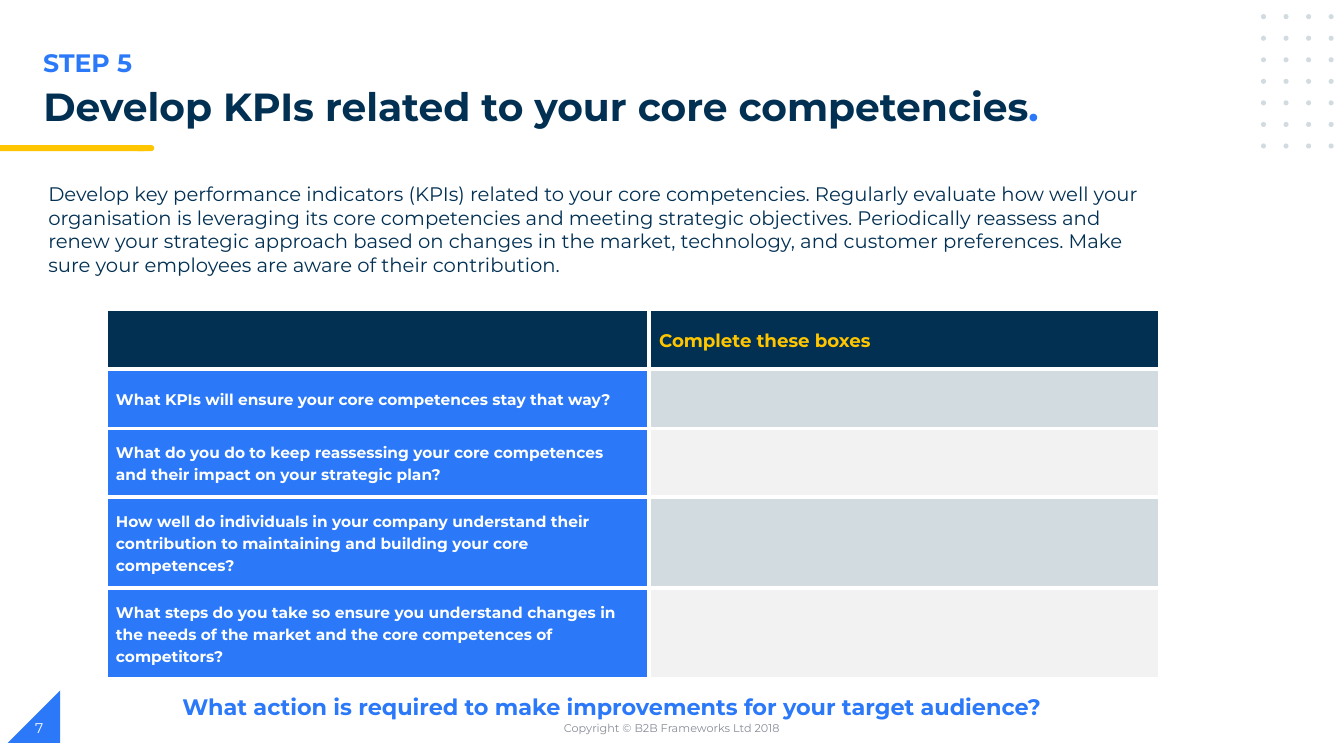
import dataclasses

import pptx
import pptx.dml.color
import pptx.enum.shapes
import pptx.enum.text
import pptx.oxml
import pptx.oxml.ns
import pptx.util

Pt = pptx.util.Pt
Shape = pptx.enum.shapes.MSO_SHAPE
Anchor = pptx.enum.text.MSO_ANCHOR
Align = pptx.enum.text.PP_ALIGN


@dataclasses.dataclass(frozen=True)
class Theme:
    font: str = "Montserrat"
    navy: str = "023053"
    blue: str = "2B79F8"
    yellow: str = "FFC600"
    mist: str = "D1DBE0"
    pale: str = "F2F2F2"
    gray: str = "888C97"
    white: str = "FFFFFF"
    title: float = 28
    step: float = 18
    action: float = 16
    body: float = 14
    header: float = 13
    question: float = 11
    number: float = 10
    copyright: float = 8


THEME = Theme()

QUESTIONS = [
    "What KPIs will ensure your core competences stay that way?",
    "What do you do to keep reassessing your core competences and their impact on your strategic plan?",
    "How well do individuals in your company understand their contribution to maintaining "
    "and building your core competences?",
    "What steps do you take so ensure you understand changes in the needs of the market "
    "and the core competences of competitors?",
]
INTRODUCTION = (
    "Develop key performance indicators (KPIs) related to your core competencies. "
    "Regularly evaluate how well your organisation is leveraging its core competencies "
    "and meeting strategic objectives. Periodically reassess and renew your strategic "
    "approach based on changes in the market, technology, and customer preferences. "
    "Make sure your employees are aware of their contribution."
)


def rgb(color):
    return pptx.dml.color.RGBColor.from_string(color)


def format_font(font, size, color, bold=False):
    font.name = THEME.font
    font.size = Pt(size)
    font.bold = bold
    font.color.rgb = rgb(color)


def add_text(page, box, text, size, color, bold=False, anchor=Anchor.TOP, align=Align.LEFT):
    frame = page.shapes.add_textbox(*map(Pt, box)).text_frame
    frame.word_wrap = True
    frame.vertical_anchor = anchor
    frame.text = text
    para = frame.paragraphs[0]
    para.alignment = align
    format_font(para.runs[0].font, size, color, bold)


def add_solid(page, kind, box, color):
    shape = page.shapes.add_shape(kind, *map(Pt, box))
    shape.shadow.inherit = False
    shape.fill.solid()
    shape.fill.fore_color.rgb = rgb(color)
    shape.line.fill.background()
    return shape


def add_heading(page, box):
    left, top, width, height = box
    add_text(page, (left, top, 482, 29), "STEP 5", THEME.step, THEME.blue, True)
    title = page.shapes.title
    title.left, title.top, title.width, title.height = map(Pt, (left, top + 29, width, height - 29))
    frame = title.text_frame
    frame.text = "Develop KPIs related to your core competencies"
    frame.word_wrap = True
    frame.auto_size = pptx.enum.text.MSO_AUTO_SIZE.NONE
    frame.vertical_anchor = Anchor.TOP
    para = frame.paragraphs[0]
    para.alignment = Align.LEFT
    para.line_spacing = 0.9
    para.add_run().text = "."
    for span, color in zip(para.runs, (THEME.navy, THEME.blue)):
        format_font(span.font, THEME.title, color, True)


def add_accent_bar(page, box):
    left, top, width, height = box
    cap = 14
    add_solid(page, Shape.FLOWCHART_TERMINATOR, (left + width - cap, top, cap, height), THEME.yellow)
    add_solid(page, Shape.RECTANGLE, (left, top, width - cap / 2, height), THEME.yellow)


def add_dot_grid(page, box, columns=4, rows=7, dot=3.6):
    left, top, width, height = box
    for row in range(rows):
        for column in range(columns):
            x = left + column * (width - dot) / (columns - 1)
            y = top + row * (height - dot) / (rows - 1)
            add_solid(page, Shape.OVAL, (x, y, dot, dot), THEME.mist)


def add_borders(cell, color, width):
    properties = cell._tc.get_or_add_tcPr()
    for index, side in enumerate(("lnL", "lnR", "lnT", "lnB")):
        line = pptx.oxml.parse_xml(
            f'<a:{side} {pptx.oxml.ns.nsdecls("a")} w="{Pt(width)}">'
            f'<a:solidFill><a:srgbClr val="{color}"/></a:solidFill></a:{side}>'
        )
        properties.insert(index, line)


def fill_cell(cell, text, fill, size, color):
    cell.fill.solid()
    cell.fill.fore_color.rgb = rgb(fill)
    add_borders(cell, THEME.white, 3)
    cell.vertical_anchor = Anchor.MIDDLE
    cell.margin_left = cell.margin_right = Pt(7.2)
    cell.margin_top = cell.margin_bottom = Pt(0)
    cell.text = text
    para = cell.text_frame.paragraphs[0]
    para.line_spacing = 1.15
    format_font(para.font, size, color, True)
    for span in para.runs:
        format_font(span.font, size, color, True)


def add_question_table(page, box):
    heights = (42.5, 42.5, 49, 65, 65)
    table = page.shapes.add_table(len(heights), 2, *map(Pt, box)).table
    table.first_row = table.horz_banding = False
    for column, width in zip(table.columns, (388, box[2] - 388)):
        column.width = Pt(width)
    for row, height in zip(table.rows, heights):
        row.height = Pt(height)
    for column, text in enumerate(("", "Complete these boxes")):
        fill_cell(table.cell(0, column), text, THEME.navy, THEME.header, THEME.yellow)
    for row, question in enumerate(QUESTIONS, 1):
        answer_fill = THEME.mist if row % 2 else THEME.pale
        fill_cell(table.cell(row, 0), question, THEME.blue, THEME.question, THEME.white)
        fill_cell(table.cell(row, 1), "", answer_fill, THEME.question, THEME.navy)


def add_footer(page, box):
    left, top, width, height = box
    corner = add_solid(page, Shape.RIGHT_TRIANGLE, (left + 5.5, top, 37.5, 37.5), THEME.blue)
    corner._element.spPr.xfrm.set("flipH", "1")
    text_top = top + 12.3
    add_text(page, (left + (width - 324) / 2, text_top, 324, 29),
             "Copyright © B2B Frameworks Ltd 2018", THEME.copyright, THEME.gray,
             anchor=Anchor.MIDDLE, align=Align.CENTER)
    add_text(page, (left + 18, text_top, 216, 29), "7", THEME.number, THEME.white,
             anchor=Anchor.MIDDLE)


def build_step_page(deck):
    page = deck.slides.add_slide(deck.slide_layouts[5])
    add_accent_bar(page, (0, 103.7, 110.2, 4.3))
    add_dot_grid(page, (900.7, 10.1, 51.9, 96))
    add_footer(page, (0, 493.2, 960, 46.8))
    add_heading(page, (23.8, 30.2, 823.7, 69.2))
    add_question_table(page, (75.6, 221, 753, 264))
    add_text(page, (123.1, 491.8, 658, 26.6),
             "What action is required to make improvements for your target audience?",
             THEME.action, THEME.blue, True)
    add_text(page, (27.4, 126.7, 806.4, 75), INTRODUCTION, THEME.body, THEME.navy)


def main():
    deck = pptx.Presentation()
    deck.slide_width, deck.slide_height = Pt(960), Pt(540)
    build_step_page(deck)
    deck.save("out.pptx")


if __name__ == "__main__":
    main()
